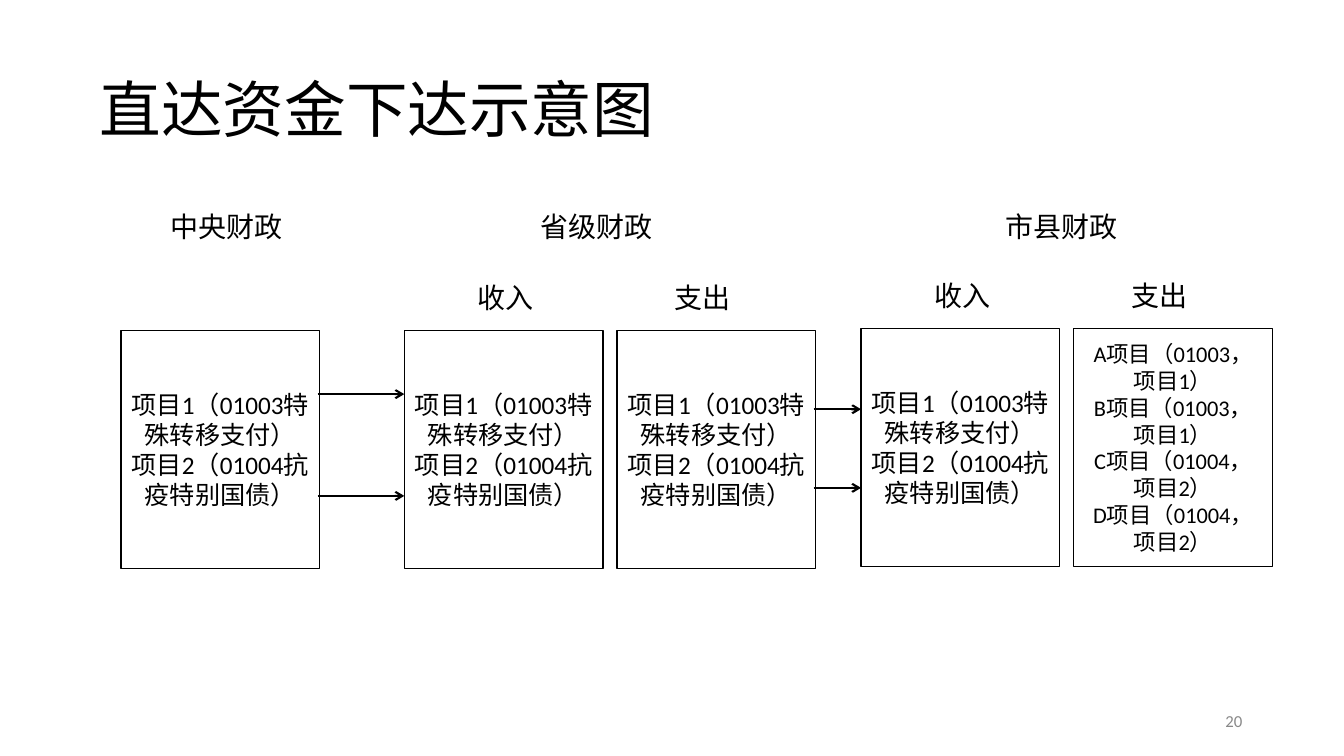
"""Build the slide that shows how direct funds pass between levels of finance."""
from lxml import etree
from pptx import Presentation
from pptx.dml.color import RGBColor
from pptx.enum.shapes import MSO_CONNECTOR, MSO_SHAPE
from pptx.enum.text import MSO_ANCHOR, PP_ALIGN
from pptx.oxml import parse_xml
from pptx.oxml.ns import nsdecls, qn
from pptx.util import Inches, Pt

BLACK = RGBColor(0, 0, 0)
WHITE = RGBColor(255, 255, 255)
GRAY = RGBColor(0x89, 0x89, 0x89)
LEFT, CENTER, RIGHT = PP_ALIGN.LEFT, PP_ALIGN.CENTER, PP_ALIGN.RIGHT
TOP, MIDDLE = MSO_ANCHOR.TOP, MSO_ANCHOR.MIDDLE
RECT, LINE = MSO_SHAPE.RECTANGLE, MSO_CONNECTOR.STRAIGHT
SHADOW = (
    f'<a:effectLst {nsdecls("a")}><a:outerShdw blurRad="38100" dist="38100" '
    'dir="2700000" algn="tl"><a:srgbClr val="000000"><a:alpha val="43000"/>'
    '</a:srgbClr></a:outerShdw></a:effectLst>'
)


class Board:
    """Hold the style and the current slide."""

    font = "Calibri"

    def __init__(self, deck):
        self.slide = deck.slides.add_slide(deck.slide_layouts[6])

    def letter(self, shape, lines, size, color=BLACK, align=LEFT, anchor=TOP, wrap=True):
        """Fill a shape with styled paragraphs."""
        frame = shape.text_frame
        frame.text = "\n".join(lines)
        for name, value in {"word_wrap": wrap, "vertical_anchor": anchor}.items():
            setattr(frame, name, value)
        style = {"size": Pt(size), "name": self.font}
        for para in frame.paragraphs:
            para.alignment = align
            for run in para.runs:
                run.font.color.rgb = color
                for name, value in style.items():
                    setattr(run.font, name, value)

    def text(self, place, words, size, **style):
        """Add a text box."""
        box = self.slide.shapes.add_textbox(*map(Inches, place))
        self.letter(box, [words], size, **style)
        return box

    def title(self, place, words):
        """Add the heading with its soft text shadow."""
        box = self.text(place, words, 44, anchor=MIDDLE)
        para = box.text_frame.paragraphs[0]
        para.line_spacing = 0.9
        fill = next(box._element.iter(qn("a:solidFill")))
        fill.addnext(parse_xml(SHADOW))

    def box(self, place, lines, size):
        """Add a framed list of projects."""
        shape = self.slide.shapes.add_shape(RECT, *map(Inches, place))
        shape.shadow.inherit = False
        shape.fill.solid()
        shape.fill.fore_color.rgb = WHITE
        shape.line.color.rgb = BLACK
        shape.line.width = Pt(1)
        self.letter(shape, lines, size, align=CENTER, anchor=MIDDLE)

    def arrow(self, start, end, y):
        """Add a level arrow."""
        link = self.slide.shapes.add_connector(LINE, *map(Inches, (start, y, end, y)))
        link.line.color.rgb = BLACK
        link.line.width = Pt(1.5)
        props = link._element.spPr
        etree.SubElement(props.find(qn("a:ln")), qn("a:tailEnd"), type="arrow")
        etree.SubElement(props, qn("a:effectLst"))


def main():
    """Draw the flow and save it."""
    deck = Presentation()
    deck.slide_width, deck.slide_height = Inches(13.33), Inches(7.5)
    board = Board(deck)
    board.title((0.89, 0.39, 11.5, 1.45), "直达资金下达示意图")

    for x, level in ((1.59, "中央财政"), (5.26, "省级财政"), (9.87, "市县财政")):
        board.text((x, 2.03, 1.32, 0.44), level, 20, wrap=False)

    funds = ["项目1（01003特殊转移支付）", "项目2（01004抗疫特别国债）"]
    uses = [
        f"{mark}项目（{code}，项目{num}）"
        for mark, code, num in (
            ("A", "01003", 1), ("B", "01003", 1), ("C", "01004", 2), ("D", "01004", 2)
        )
    ]
    boxes = (
        (1.2, 3.28, None, funds, 18),
        (4.01, 3.28, "收入", funds, 18),
        (6.12, 3.28, "支出", funds, 18),
        (8.54, 3.26, "收入", funds, 18),
        (10.65, 3.26, "支出", uses, 16),
    )
    for x, y, label, lines, size in boxes:
        board.box((x, y, 1.97, 2.36), lines, size)
        if label:
            shift = 0.63 if label == "收入" else 0.47
            board.text((x + shift, y - 0.55, 0.76, 0.44), label, 20, wrap=False)

    for start, end, rows in ((3.15, 4.01, (3.91, 4.92)), (8.07, 8.54, (4.06, 4.84))):
        for y in rows:
            board.arrow(start, end, y)

    board.text((9.42, 6.95, 3, 0.4), "20", 12, color=GRAY, align=RIGHT, anchor=MIDDLE)
    deck.save("out.pptx")


if __name__ == "__main__":
    main()
